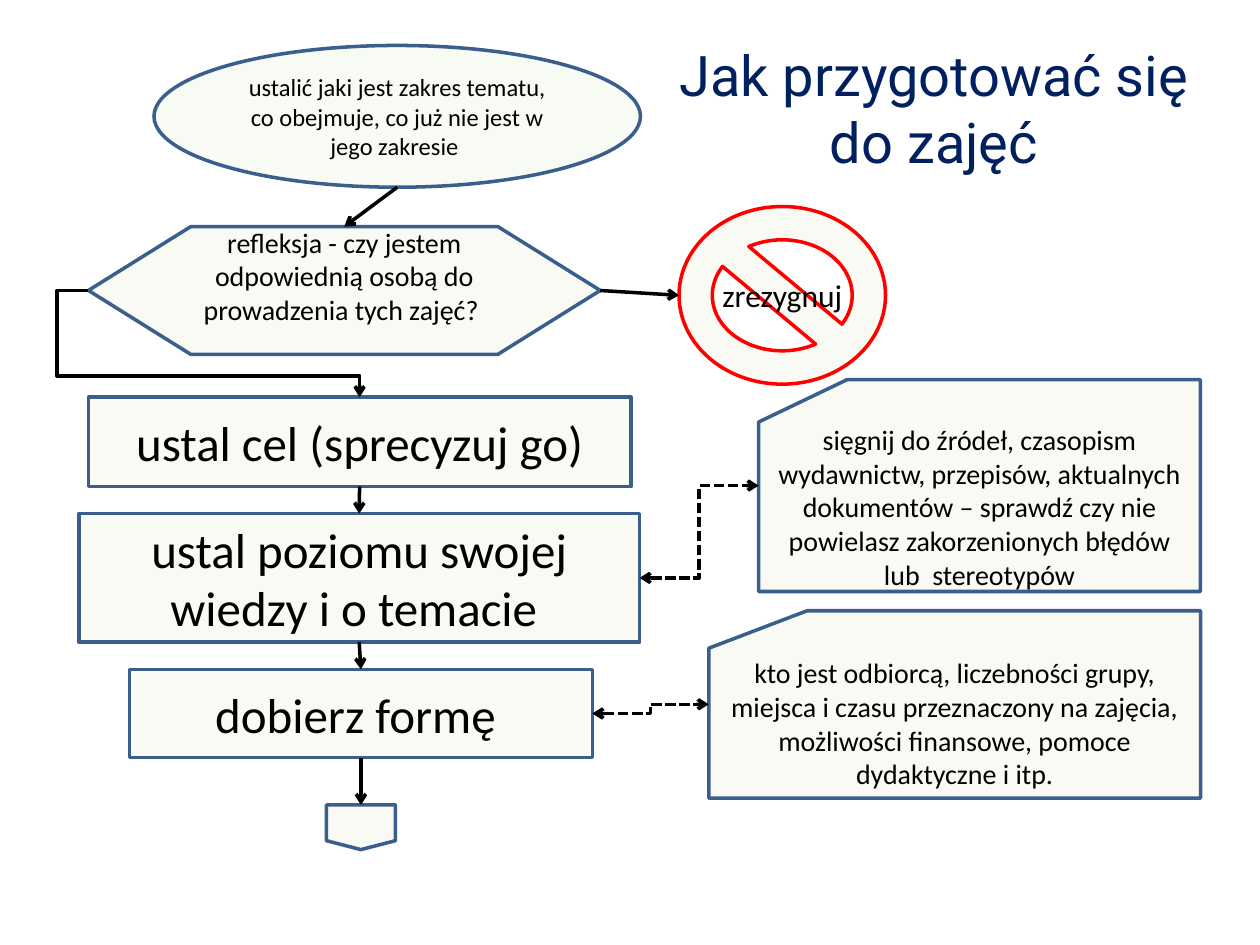
from dataclasses import dataclass

from lxml import etree
from pptx import Presentation
from pptx.dml.color import RGBColor
from pptx.enum.dml import MSO_LINE
from pptx.enum.shapes import MSO_CONNECTOR, MSO_SHAPE
from pptx.enum.text import MSO_ANCHOR, MSO_AUTO_SIZE, PP_ALIGN
from pptx.oxml.ns import qn
from pptx.util import Pt

STRAIGHT, ELBOW = MSO_CONNECTOR.STRAIGHT, MSO_CONNECTOR.ELBOW
OVAL, STEP = MSO_SHAPE.OVAL, MSO_SHAPE.FLOWCHART_PROCESS
QUESTION, NOTE = MSO_SHAPE.FLOWCHART_PREPARATION, MSO_SHAPE.FLOWCHART_CARD
STOP, NEXT_PAGE = MSO_SHAPE.NO_SYMBOL, MSO_SHAPE.FLOWCHART_OFFPAGE_CONNECTOR
DASH = MSO_LINE.SQUARE_DOT
CENTER, MIDDLE = PP_ALIGN.CENTER, MSO_ANCHOR.MIDDLE
TOP, LEFT, BOTTOM, RIGHT = range(4)
TITLE_ONLY = 5


@dataclass(frozen=True)
class Theme:
    fill: str = "EBF1DE"
    outline: str = "3A5F8C"
    stop: str = "FF0000"
    ink: str = "000000"
    title: str = "002060"
    body_font: str = "Calibri"
    title_font: str = "Roboto"
    title_size: int = 32
    step_size: int = 28
    stop_size: int = 18
    note_size: int = 16
    start_size: int = 14
    line: int = 2


THEME = Theme()


def write(tf, text, size, color=THEME.ink, font=THEME.body_font):
    tf.word_wrap = True
    tf.auto_size = MSO_AUTO_SIZE.NONE
    tf.vertical_anchor = MIDDLE
    p = tf.paragraphs[0]
    p.alignment = CENTER
    r = p.add_run()
    r.text = text
    r.font.name = font
    r.font.size = Pt(size)
    r.font.color.rgb = RGBColor.from_string(color)


def add_title(slide, text, box):
    sp = slide.shapes.title
    sp.left, sp.top, sp.width, sp.height = map(Pt, box)
    write(sp.text_frame, text, THEME.title_size, THEME.title, THEME.title_font)


def add_node(slide, kind, box, text="", size=THEME.note_size,
             outline=THEME.outline, opacity=34):
    sp = slide.shapes.add_shape(kind, *map(Pt, box))
    sp.shadow.inherit = False
    sp.fill.solid()
    sp.fill.fore_color.rgb = RGBColor.from_string(THEME.fill)
    color = sp._element.spPr.find(qn("a:solidFill")).find(qn("a:srgbClr"))
    etree.SubElement(color, qn("a:alpha"), val=str(opacity * 1000))
    sp.line.color.rgb = RGBColor.from_string(outline)
    sp.line.width = Pt(THEME.line)
    if text:
        write(sp.text_frame, text, size)
    return sp


def side_point(sp, side):
    """Return the middle of one side of a shape."""
    return {
        TOP: (sp.left + sp.width // 2, sp.top),
        LEFT: (sp.left, sp.top + sp.height // 2),
        BOTTOM: (sp.left + sp.width // 2, sp.top + sp.height),
        RIGHT: (sp.left + sp.width, sp.top + sp.height // 2),
    }[side]


def add_arrow(slide, start, start_side, end, end_side, kind=STRAIGHT, two_way=False):
    """Link two shapes; a two-way arrow is dashed."""
    c = slide.shapes.add_connector(
        kind, *side_point(start, start_side), *side_point(end, end_side))
    # Round shapes number their connection sites differently.
    if start.auto_shape_type not in (OVAL, STOP):
        c.begin_connect(start, start_side)
    if end.auto_shape_type not in (OVAL, STOP):
        c.end_connect(end, end_side)
    c.line.color.rgb = RGBColor.from_string(THEME.ink)
    c.line.width = Pt(THEME.line)
    if two_way:
        c.line.dash_style = DASH
    ln = c._element.spPr.find(qn("a:ln"))
    for tag in ("a:headEnd", "a:tailEnd") if two_way else ("a:tailEnd",):
        etree.SubElement(ln, qn(tag), type="arrow")
    etree.SubElement(c._element.spPr, qn("a:effectLst"))
    return c


def bend_four(c, **adjustments):
    """Give an elbow connector a third bend, placed in thousandths of a percent."""
    geom = c._element.spPr.find(qn("a:prstGeom"))
    geom.set("prst", "bentConnector4")
    guides = geom.find(qn("a:avLst"))
    if guides is None:
        guides = etree.SubElement(geom, qn("a:avLst"))
    for name, value in adjustments.items():
        etree.SubElement(guides, qn("a:gd"), name=name, fmla=f"val {value}")


def main():
    prs = Presentation()
    prs.slide_width, prs.slide_height = Pt(720), Pt(540)
    slide = prs.slides.add_slide(prs.slide_layouts[TITLE_ONLY])
    add_title(slide, "Jak przygotować się do zajęć", (366, 16.5, 335.5, 90))

    scope = add_node(
        slide, OVAL, (88, 26, 278, 81),
        "ustalić jaki jest zakres tematu, co obejmuje, co już nie jest w jego zakresie ",
        THEME.start_size, opacity=31)
    goal = add_node(slide, STEP, (50.5, 227, 310, 51),
                    "ustal cel (sprecyzuj go)", THEME.step_size)
    level = add_node(slide, STEP, (45, 293.5, 320.5, 73.5),
                     "ustal poziomu swojej wiedzy i o temacie ", THEME.step_size)
    form = add_node(slide, STEP, (74, 382.5, 264.5, 50.5),
                    "dobierz formę ", THEME.step_size)
    sources = add_node(
        slide, NOTE, (433.5, 217, 252.5, 121),
        "sięgnij do źródeł, czasopism wydawnictw, przepisów, aktualnych dokumentów "
        "– sprawdź czy nie powielasz zakorzenionych błędów lub  stereotypów")
    audience = add_node(
        slide, NOTE, (405, 349, 281, 107),
        "kto jest odbiorcą, liczebności grupy, miejsca i czasu przeznaczony na "
        "zajęcia, możliwości finansowe, pomoce dydaktyczne i itp.")
    reflection = add_node(
        slide, QUESTION, (50.5, 129.5, 292.5, 73),
        "refleksja - czy jestem odpowiednią osobą do prowadzenia tych zajęć? ")
    reflection.text_frame.margin_top = 0
    reflection.text_frame.margin_bottom = Pt(17)
    resign = add_node(slide, STOP, (388, 118, 118, 101.5), "zrezygnuj",
                      THEME.stop_size, outline=THEME.stop)
    next_page = add_node(slide, NEXT_PAGE, (186.5, 460, 39.5, 25.5))

    add_arrow(slide, scope, BOTTOM, reflection, TOP)
    add_arrow(slide, reflection, RIGHT, resign, LEFT)
    detour = add_arrow(slide, reflection, LEFT, goal, TOP, ELBOW)
    bend_four(detour, adj1=-11600, adj2=80000)
    for upper, lower in ((goal, level), (level, form), (form, next_page)):
        add_arrow(slide, upper, BOTTOM, lower, TOP)
    for step, note in ((level, sources), (form, audience)):
        add_arrow(slide, step, RIGHT, note, LEFT, ELBOW, two_way=True)

    prs.save("out.pptx")


if __name__ == "__main__":
    main()
